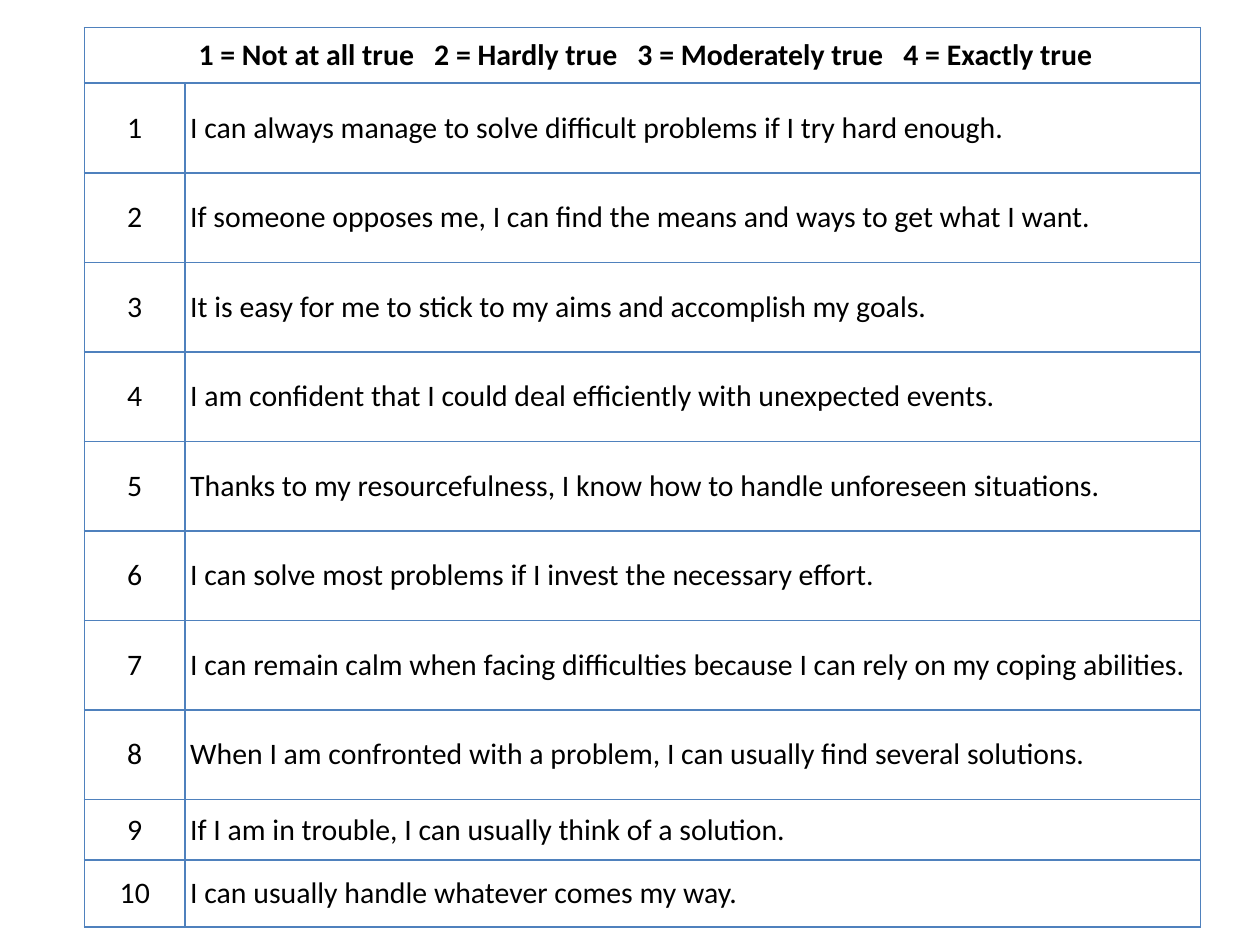
from dataclasses import dataclass

from lxml import etree
from pptx import Presentation
from pptx import util as u
from pptx.dml.color import RGBColor
from pptx.enum import text
from pptx.oxml import ns


@dataclass(frozen=True)
class Theme:
    """Colours, font and sizes of the slide."""
    ink: str = "000000"
    paper: str = "FFFFFF"
    rule: str = "4F81BD"
    rule_width: float = 1
    font: str = "Calibri"
    size: float = 17


THEME = Theme()
SCALE = ["Not at all true", "Hardly true", "Moderately true", "Exactly true"]
STATEMENTS = [
    "I can always manage to solve difficult problems if I try hard enough.",
    "If someone opposes me, I can find the means and ways to get what I want.",
    "It is easy for me to stick to my aims and accomplish my goals.",
    "I am confident that I could deal efficiently with unexpected events.",
    "Thanks to my resourcefulness, I know how to handle unforeseen situations.",
    "I can solve most problems if I invest the necessary effort.",
    "I can remain calm when facing difficulties because I can rely on my coping abilities.",
    "When I am confronted with a problem, I can usually find several solutions.",
    "If I am in trouble, I can usually think of a solution.",
    "I can usually handle whatever comes my way.",
]
COLUMN_WIDTHS = [0.8, 8.06]
ROW_HEIGHTS = [0.44] + [0.71] * 8 + [0.48, 0.53]


def rule_cell(cell):
    """Draw the four borders of a cell."""
    properties = cell._tc.get_or_add_tcPr()
    for side in ("lnL", "lnR", "lnT", "lnB"):
        border = etree.SubElement(properties, ns.qn(f"a:{side}"), w=str(u.Pt(THEME.rule_width)))
        fill = etree.SubElement(border, ns.qn("a:solidFill"))
        etree.SubElement(fill, ns.qn("a:srgbClr"), val=THEME.rule)


def style_cell(cell):
    """Give a cell its borders, fill and margins."""
    rule_cell(cell)
    cell.fill.solid()
    cell.fill.fore_color.rgb = RGBColor.from_string(THEME.paper)
    cell.vertical_anchor = text.MSO_ANCHOR.MIDDLE
    cell.margin_left = cell.margin_right = u.Inches(0.04)
    cell.margin_top = cell.margin_bottom = 0


def write_cell(cell, wording, centred=False, bold=False):
    """Write a cell's wording in the theme's type."""
    paragraph = cell.text_frame.paragraphs[0]
    paragraph.text = wording
    paragraph.alignment = text.PP_ALIGN.CENTER if centred else text.PP_ALIGN.LEFT
    for run in paragraph.runs:
        run.font.name = THEME.font
        run.font.size = u.Pt(THEME.size)
        run.font.bold = bold
        run.font.color.rgb = RGBColor.from_string(THEME.ink)


def add_questionnaire(slide, left, top, width, height):
    """Place the answer scale and numbered statements in one table."""
    frame = slide.shapes.add_table(len(ROW_HEIGHTS), len(COLUMN_WIDTHS), left, top, width, height)
    table = frame.table
    table.first_row = table.horz_banding = False
    for column, share in zip(table.columns, COLUMN_WIDTHS):
        column.width = int(width * share / sum(COLUMN_WIDTHS))
    for row, share in zip(table.rows, ROW_HEIGHTS):
        row.height = int(height * share / sum(ROW_HEIGHTS))
    for cell in table.iter_cells():
        style_cell(cell)

    scale_cell = table.cell(0, 0)
    scale_cell.merge(table.cell(0, 1))
    answers = [f"{score} = {meaning}" for score, meaning in enumerate(SCALE, 1)]
    write_cell(scale_cell, " " + "   ".join(answers), centred=True, bold=True)
    for number, statement in enumerate(STATEMENTS, 1):
        write_cell(table.cell(number, 0), str(number), centred=True)
        write_cell(table.cell(number, 1), statement)


def main():
    """Build and save the slide."""
    deck = Presentation()
    deck.slide_width, deck.slide_height = u.Inches(10), u.Inches(7.5)
    slide = deck.slides.add_slide(deck.slide_layouts[6])
    add_questionnaire(slide, u.Inches(0.67), u.Inches(0.22), u.Inches(8.86), u.Inches(7.14))
    deck.save("out.pptx")


if __name__ == "__main__":
    main()
